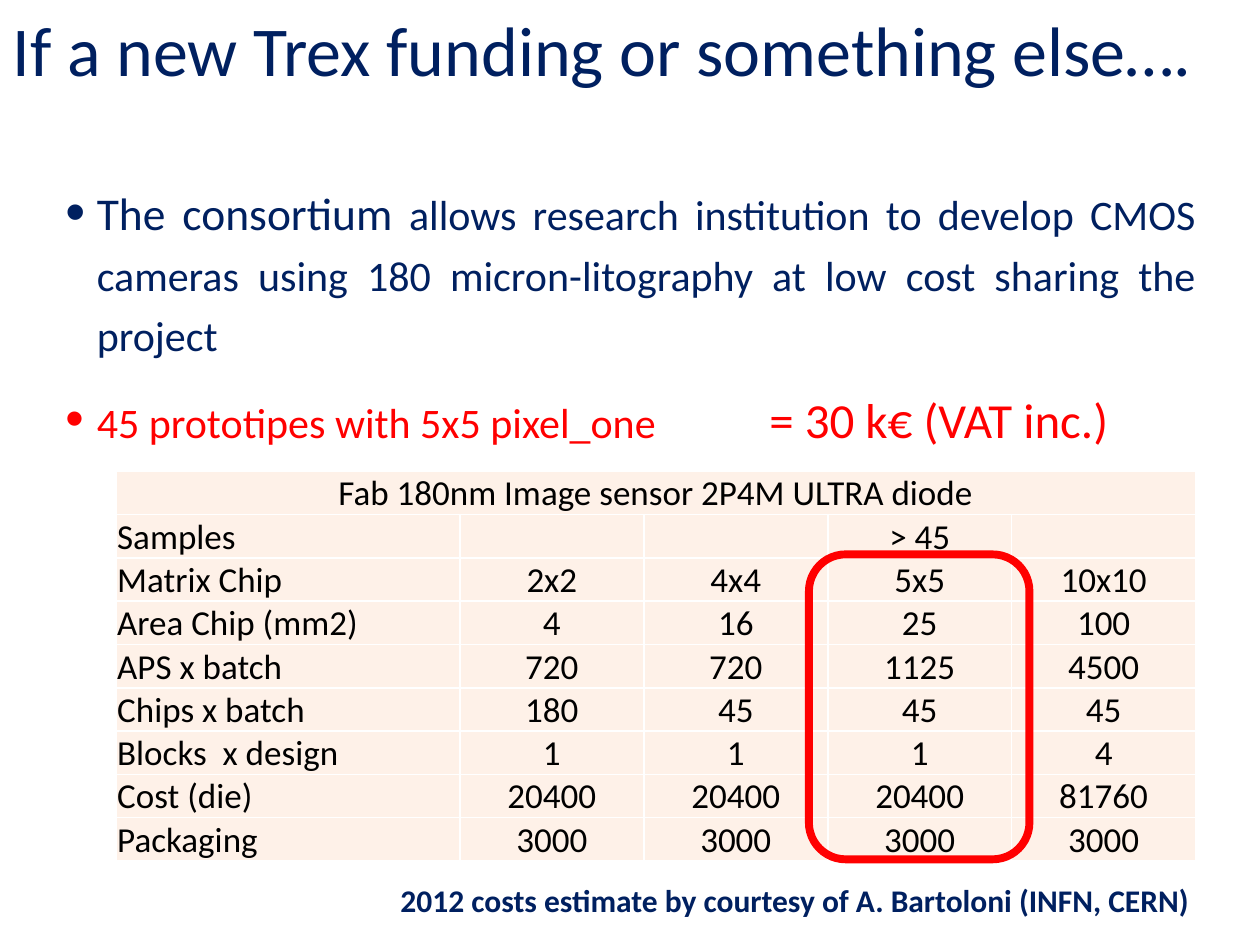
"""Build the slide on the cost of prototype sensor chips."""
from lxml.etree import SubElement
from pptx import Presentation
from pptx.dml.color import RGBColor
from pptx.enum.shapes import MSO_SHAPE
from pptx.enum.text import MSO_ANCHOR, PP_ALIGN
from pptx.oxml.ns import qn
from pptx.util import Inches, Pt

NAVY = RGBColor(0x00, 0x20, 0x60)
RED = RGBColor(0xFF, 0x00, 0x00)
BLACK = RGBColor(0x00, 0x00, 0x00)
PEACH = RGBColor(0xFE, 0xF1, 0xE8)
FONT = "Calibri"

TITLE = "If a new Trex funding or something else…."
POINTS = [
    (NAVY, [("The consortium", 26),
            (" allows research institution to develop CMOS cameras using "
             "180 micron-litography at low cost sharing the project", 24)]),
    (RED, [("45 prototipes with 5x5 pixel_one \t\t", 24),
           (" = 30 k€ (VAT inc.)", 28)]),
]
HEAD = "Fab 180nm Image sensor 2P4M ULTRA diode"
ROWS = [
    ("Samples", "", "", "> 45", ""),
    ("Matrix Chip", "2x2", "4x4", "5x5", "10x10"),
    ("Area Chip (mm2)", "4", "16", "25", "100"),
    ("APS x batch", "720", "720", "1125", "4500"),
    ("Chips x batch", "180", "45", "45", "45"),
    ("Blocks  x design", "1", "1", "1", "4"),
    ("Cost (die)", "20400", "20400", "20400", "81760"),
    ("Packaging", "3000", "3000", "3000", "3000"),
]
WIDTHS = [2.73] + [1.46] * 4
ROW_H = 0.34
CREDIT = "2012 costs estimate by courtesy of A. Bartoloni (INFN, CERN)"


def box(*dims):
    return [Inches(d) for d in dims]


def add_run(para, text, size, color, bold=False):
    run = para.add_run()
    run.text = text
    font = run.font
    font.name, font.size, font.bold = FONT, Pt(size), bold
    font.color.rgb = color


def add_bullet(para):
    props = para._p.get_or_add_pPr()
    props.set("marL", str(Inches(0.25)))
    props.set("indent", str(Inches(-0.25)))
    SubElement(props, qn("a:buSzPct"), val="125000")
    SubElement(props, qn("a:buFont"), typeface="Arial")
    SubElement(props, qn("a:buChar"), char="•")


def add_edges(cell):
    props = cell._tc.get_or_add_tcPr()
    for spot, side in enumerate(("lnL", "lnR", "lnT", "lnB")):
        line = SubElement(props, qn("a:" + side), w=str(Pt(1)))
        fill = SubElement(line, qn("a:solidFill"))
        SubElement(fill, qn("a:srgbClr"), val="FFFFFF")
        props.insert(spot, line)


def add_title(slide):
    title = slide.shapes.title
    title.left, title.top, title.width, title.height = box(0, 0, 10, 1.5)
    frame = title.text_frame
    frame.word_wrap = True
    frame.vertical_anchor = MSO_ANCHOR.TOP
    para = frame.paragraphs[0]
    para.alignment = PP_ALIGN.LEFT
    add_run(para, TITLE, 40, NAVY)


def add_points(slide):
    frame = slide.shapes.add_textbox(*box(0.42, 1.33, 9.17, 2.33)).text_frame
    frame.word_wrap = True
    for num, (color, runs) in enumerate(POINTS):
        para = frame.add_paragraph() if num else frame.paragraphs[0]
        para.alignment = PP_ALIGN.JUSTIFY
        para.line_spacing = 1.2
        para.space_before = Pt(10)
        add_bullet(para)
        for text, size in runs:
            add_run(para, text, size, color)


def add_costs(slide):
    grid = [(HEAD, "", "", "", "")] + ROWS
    dims = box(0.92, 3.74, sum(WIDTHS), ROW_H * len(grid))
    table = slide.shapes.add_table(len(grid), len(WIDTHS), *dims).table
    table.first_row = table.horz_banding = False
    for col, width in zip(table.columns, WIDTHS):
        col.width = Inches(width)
    for r, row in enumerate(grid):
        table.rows[r].height = Inches(ROW_H)
        for c, text in enumerate(row):
            cell = table.cell(r, c)
            cell.margin_left = cell.margin_right = cell.margin_top = Inches(0.01)
            cell.margin_bottom = 0
            cell.vertical_anchor = MSO_ANCHOR.BOTTOM
            cell.fill.solid()
            cell.fill.fore_color.rgb = PEACH
            add_edges(cell)
            if text:
                para = cell.text_frame.paragraphs[0]
                left = r > 0 and c == 0
                para.alignment = PP_ALIGN.LEFT if left else PP_ALIGN.CENTER
                add_run(para, text, 20, BLACK)
    table.cell(0, 0).merge(table.cell(0, len(WIDTHS) - 1))


def add_frame(slide):
    dims = box(6.42, 4.4, 1.75, 2.42)
    ring = slide.shapes.add_shape(MSO_SHAPE.ROUNDED_RECTANGLE, *dims)
    ring.shadow.inherit = False
    ring.fill.background()
    ring.line.color.rgb = RED
    ring.line.width = Pt(4.5)


def add_credit(slide):
    frame = slide.shapes.add_textbox(*box(3.08, 6.94, 6.58, 0.4)).text_frame
    frame.word_wrap = True
    add_run(frame.paragraphs[0], CREDIT, 18, NAVY, True)


def main():
    deck = Presentation()
    deck.slide_width, deck.slide_height = box(10, 7.5)
    slide = deck.slides.add_slide(deck.slide_layouts[5])
    for step in (add_title, add_points, add_costs, add_frame, add_credit):
        step(slide)
    deck.save("out.pptx")


if __name__ == "__main__":
    main()
